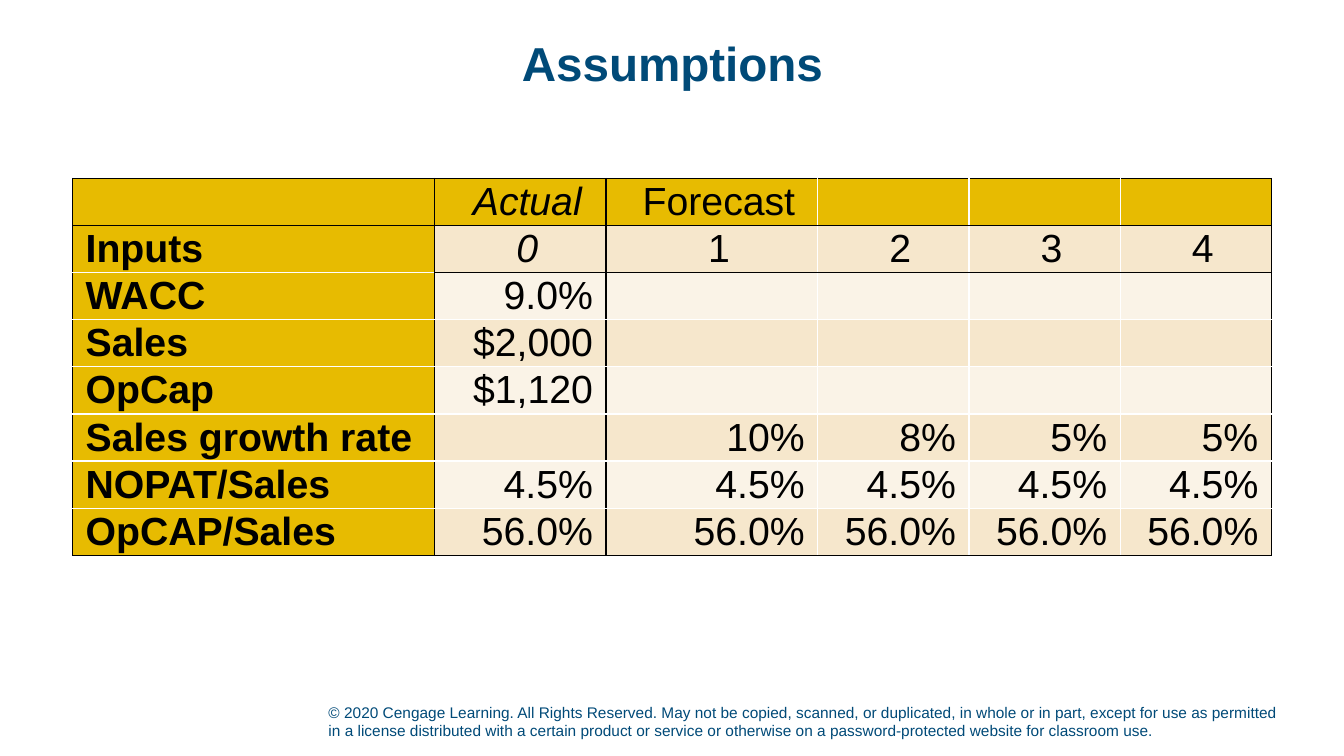
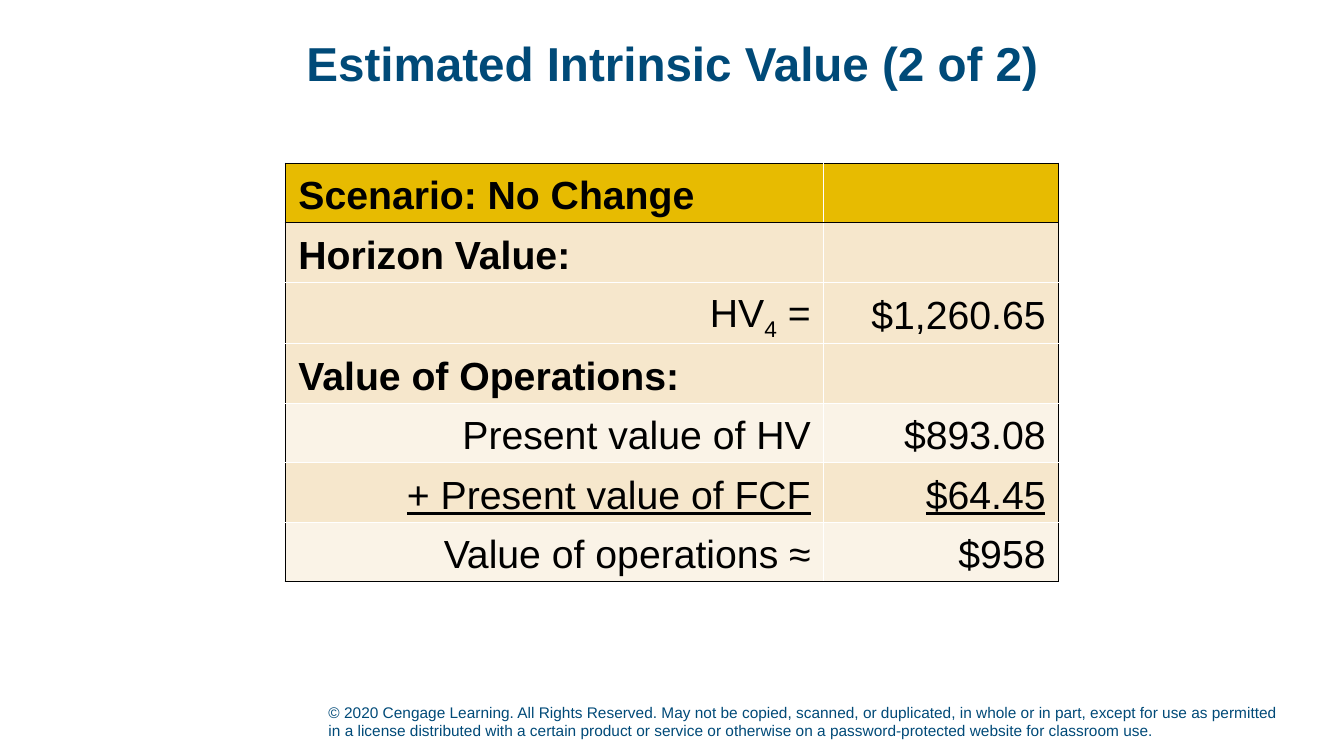
from lxml import etree
from pptx import Presentation
from pptx.dml.color import RGBColor
from pptx.enum.text import MSO_ANCHOR, PP_ALIGN
from pptx.oxml.ns import qn
from pptx.util import Inches, Pt

LEFT, CENTER, RIGHT = PP_ALIGN.LEFT, PP_ALIGN.CENTER, PP_ALIGN.RIGHT
MIDDLE, BOTTOM = MSO_ANCHOR.MIDDLE, MSO_ANCHOR.BOTTOM
TITLE_ONLY = 5
FONT = "Arial"
NAVY, BLACK, WHITE = "004A78", "000000", "FFFFFF"
GOLD, SAND, CREAM = "E7BB01", "F6E7CC", "FAF3E7"
COPYRIGHT = (
    "© 2020 Cengage Learning. All Rights Reserved. May not be copied, scanned, "
    "or duplicated, in whole or in part, except for use as permitted in a license "
    "distributed with a certain product or service or otherwise on a "
    "password-protected website for classroom use."
)

ASSUMPTIONS = [
    ["", "Actual", "Forecast", "", "", ""],
    ["Inputs", "0", "1", "2", "3", "4"],
    ["WACC", "9.0%", "", "", "", ""],
    ["Sales", "$2,000", "", "", "", ""],
    ["OpCap", "$1,120", "", "", "", ""],
    ["Sales growth rate", "", "10%", "8%", "5%", "5%"],
    ["NOPAT/Sales"] + ["4.5%"] * 5,
    ["OpCAP/Sales"] + ["56.0%"] * 5,
]
VALUATION = [
    ["Scenario: No Change", ""],
    ["Horizon Value:", ""],
    [("HV", "4", " ="), "$1,260.65"],
    ["Value of Operations:", ""],
    ["Present value of HV", "$893.08"],
    ["+ Present value of FCF", "$64.45"],
    ["Value of operations ≈", "$958"],
]
VALUATION_FILLS = [GOLD, SAND, SAND, SAND, CREAM, SAND, CREAM]
HEADING_ROWS = (0, 1, 3)
UNDERLINED_ROW = 5


def rgb(value):
    return RGBColor.from_string(value)


def write_text(frame, text, size=28, color=BLACK, bold=False, italic=False,
               underline=False, align=LEFT, spacing=None, indent=0):
    paragraph = frame.paragraphs[0]
    paragraph.alignment = align
    if spacing:
        paragraph.line_spacing = spacing
    if indent:
        properties = paragraph._p.get_or_add_pPr()
        properties.set("marL", "0")
        properties.set("indent", str(Inches(indent)))
    parts = (text,) if isinstance(text, str) else text
    for position, part in enumerate(parts):
        run = paragraph.add_run()
        run.text = part
        font = run.font
        font.name, font.size = FONT, Pt(size)
        font.bold, font.italic, font.underline = bold, italic, underline
        font.color.rgb = rgb(color)
        if position % 2:
            font._element.set("baseline", "-25000")


def set_borders(cell, left, right, top, bottom):
    properties = cell._tc.get_or_add_tcPr()
    edges = zip(("lnL", "lnR", "lnT", "lnB"), (left, right, top, bottom))
    for position, (edge, dark) in enumerate(edges):
        line = etree.Element(qn(f"a:{edge}"), w=str(Pt(1)))
        fill = etree.SubElement(line, qn("a:solidFill"))
        etree.SubElement(fill, qn("a:srgbClr"), val=BLACK if dark else WHITE)
        properties.insert(position, line)


def add_grid(slide, box, rows, widths, row_height, cell_style, dark_column, dark_row):
    left, top = box
    table = slide.shapes.add_table(
        len(rows), len(widths), Inches(left), Inches(top),
        Inches(sum(widths)), Inches(row_height * len(rows))).table
    table.first_row = table.horz_banding = False
    for column, width in zip(table.columns, widths):
        column.width = Inches(width)
    for r, row in enumerate(rows):
        table.rows[r].height = Inches(row_height)
        for c, text in enumerate(row):
            cell = table.cell(r, c)
            fill, text_format = cell_style(r, c)
            cell.fill.solid()
            cell.fill.fore_color.rgb = rgb(fill)
            cell.vertical_anchor = MIDDLE
            cell.margin_left = cell.margin_right = Inches(0.13)
            cell.margin_top = cell.margin_bottom = 0
            if text:
                write_text(cell.text_frame, text, **text_format)
            set_borders(cell, dark_column(c), dark_column(c + 1),
                        dark_row(r, c), dark_row(r + 1, c))


def add_footer(slide, box):
    frame = slide.shapes.add_textbox(*map(Inches, box)).text_frame
    frame.word_wrap = True
    frame.vertical_anchor = BOTTOM
    write_text(frame, COPYRIGHT, size=11, color=NAVY)


def add_titled_slide(deck, heading):
    slide = deck.slides.add_slide(deck.slide_layouts[TITLE_ONLY])
    add_footer(slide, (3.16, 6.89, 9.63, 0.5))
    title = slide.shapes.title
    title.left, title.top, title.width, title.height = map(Inches, (0.92, 0.15, 11.5, 1))
    title.text_frame.vertical_anchor = MIDDLE
    write_text(title.text_frame, heading, size=34, color=NAVY, bold=True,
               align=CENTER, spacing=0.95)
    return slide


def assumptions_style(row, column):
    fill = GOLD if row == 0 or column == 0 else SAND if row % 2 else CREAM
    if column == 0:
        return fill, {"bold": True}
    if row < 2:
        return fill, {"align": CENTER, "indent": 0.14, "italic": column == 1}
    return fill, {"align": RIGHT}


def valuation_style(row, column):
    heading = row in HEADING_ROWS
    return VALUATION_FILLS[row], {
        "bold": heading, "align": LEFT if heading else RIGHT,
        "underline": row == UNDERLINED_ROW, "spacing": 1.15}


def add_assumptions(deck):
    slide = add_titled_slide(deck, "Assumptions")
    add_grid(slide, (0.72, 1.77), ASSUMPTIONS, [3.59, 1.7, 2.1, 1.5, 1.5, 1.5], 0.43,
             assumptions_style,
             lambda line: line in (0, 1, 2, 6),
             lambda line, column: line in (0, 1, 8) or (line == 2 and column > 0))


def add_valuation(deck):
    slide = add_titled_slide(deck, "Estimated Intrinsic Value (2 of 2)")
    add_grid(slide, (2.83, 1.62), VALUATION, [5.34, 2.33], 0.59, valuation_style,
             lambda line: line in (0, 2),
             lambda line, column: line in (0, 1, 7))


def main():
    deck = Presentation()
    deck.slide_width, deck.slide_height = Inches(13.33), Inches(7.5)
    add_assumptions(deck)
    add_valuation(deck)
    deck.save("out.pptx")


if __name__ == "__main__":
    main()
